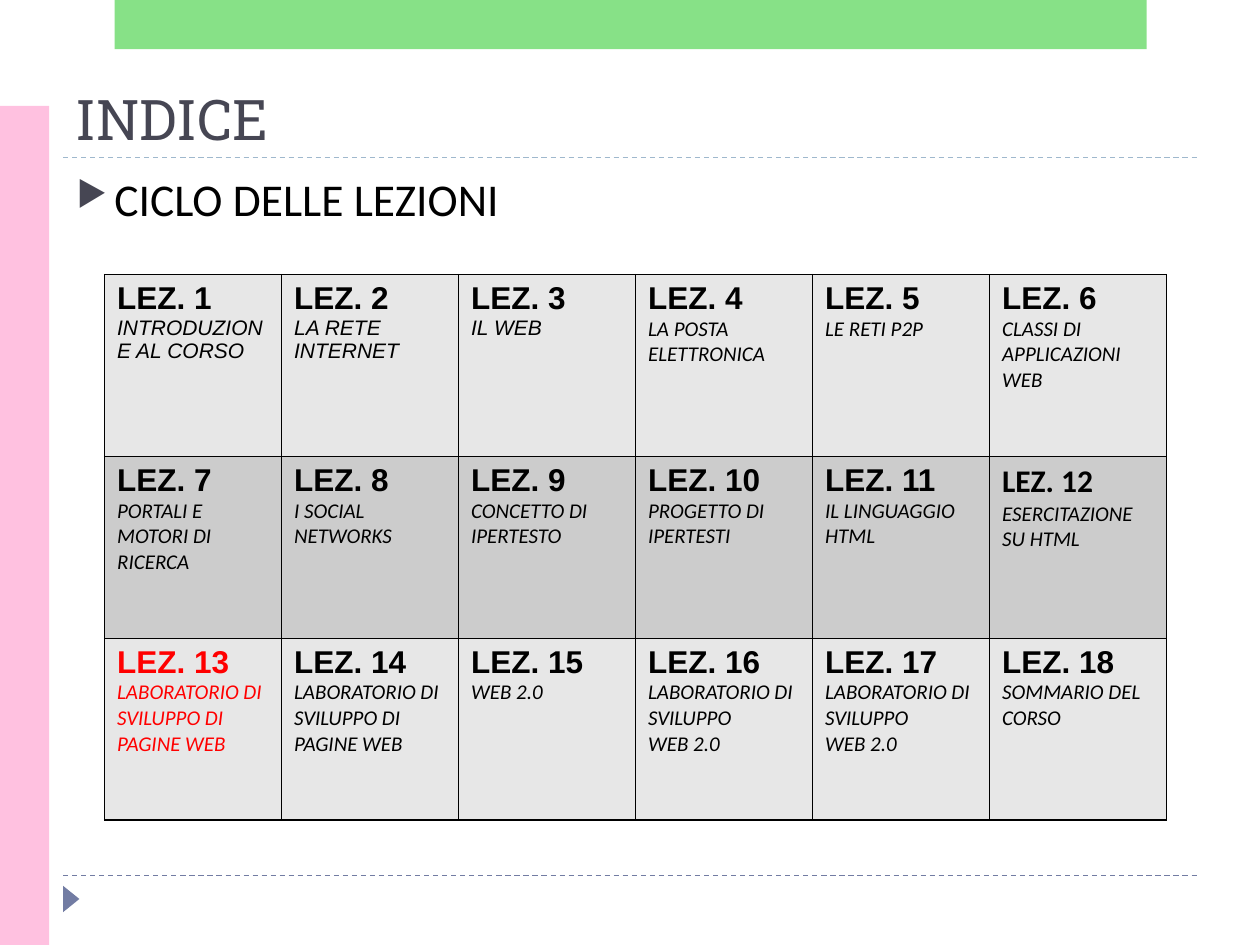
from dataclasses import dataclass

from lxml.etree import SubElement
from pptx import Presentation
from pptx.dml.color import RGBColor
from pptx.enum.dml import MSO_LINE
from pptx.enum.shapes import MSO_CONNECTOR, MSO_SHAPE
from pptx.enum.text import MSO_ANCHOR
from pptx.oxml.ns import qn
from pptx.util import Inches, Pt


@dataclass(frozen=True)
class Theme:
    heading_font: str = "Roboto Slab"
    body_font: str = "Calibri"
    table_font: str = "Arial"
    title_size: int = 32
    body_size: int = 26
    lesson_size: int = 18
    topic_size: int = 12
    ink: str = "000000"
    slate: str = "464653"
    accent: str = "727CA3"
    pale_rule: str = "9FB8CD"
    pink: str = "FFC1E0"
    green: str = "62D862"
    highlight: str = "FF0000"
    row_fills: tuple[str, ...] = ("E7E7E7", "CCCCCC")


THEME = Theme()


@dataclass(frozen=True)
class Lesson:
    topic: str
    number_font: str = THEME.table_font
    topic_font: str = THEME.body_font
    color: str = THEME.ink


@dataclass(frozen=True)
class Block:
    kind: MSO_SHAPE
    box: tuple[float, float, float, float]
    color: str
    rotation: int = 0
    opacity: int = 100


@dataclass(frozen=True)
class Rule:
    top: float
    color: str


BLOCKS = [
    Block(MSO_SHAPE.ISOSCELES_TRIANGLE, (0.46, 7.07, 0.21, 0.13), THEME.accent, rotation=90),
    Block(MSO_SHAPE.RECTANGLE, (0, 0.84, 0.39, 6.66), THEME.pink),
    Block(MSO_SHAPE.RECTANGLE, (0.91, 0, 8.19, 0.39), THEME.green, opacity=76),
]
RULES = [Rule(6.95, THEME.accent), Rule(1.25, THEME.pale_rule)]

LESSONS = [
    Lesson("INTRODUZIONE AL CORSO", topic_font=THEME.table_font),
    Lesson("LA RETE INTERNET", topic_font=THEME.table_font),
    Lesson("IL WEB", topic_font=THEME.table_font),
    Lesson("LA POSTA ELETTRONICA"),
    Lesson("LE RETI P2P"),
    Lesson("CLASSI DI APPLICAZIONI WEB"),
    Lesson("PORTALI E MOTORI DI RICERCA"),
    Lesson("I SOCIAL NETWORKS"),
    Lesson("CONCETTO DI IPERTESTO"),
    Lesson("PROGETTO DI IPERTESTI"),
    Lesson("IL LINGUAGGIO HTML"),
    Lesson("ESERCITAZIONE SU HTML", number_font=THEME.body_font),
    Lesson("LABORATORIO DI SVILUPPO DI PAGINE WEB", color=THEME.highlight),
    Lesson("LABORATORIO DI SVILUPPO DI PAGINE WEB"),
    Lesson("WEB 2.0"),
    Lesson("LABORATORIO DI SVILUPPO \nWEB 2.0"),
    Lesson("LABORATORIO DI SVILUPPO \nWEB 2.0"),
    Lesson("SOMMARIO DEL CORSO"),
]
COLUMNS = 6
ROWS = len(LESSONS) // COLUMNS


def add_span(para, text: str, font: str, size: int, color: str,
             bold: bool = False, italic: bool = False) -> None:
    for index, line in enumerate(text.split("\n")):
        if index:
            para.add_line_break()
        span = para.add_run()
        span.text = line
        span.font.name = font
        span.font.size = Pt(size)
        span.font.bold = bold
        span.font.italic = italic
        span.font.color.rgb = RGBColor.from_string(color)


def add_block(page, block: Block) -> None:
    shape = page.shapes.add_shape(block.kind, *map(Inches, block.box))
    shape.shadow.inherit = False
    shape.rotation = block.rotation
    shape.fill.solid()
    shape.fill.fore_color.rgb = RGBColor.from_string(block.color)
    shape.line.fill.background()
    if block.opacity < 100:
        color = shape.fill._xPr.find(".//" + qn("a:srgbClr"))
        SubElement(color, qn("a:alpha"), val=str(block.opacity * 1000))


def add_rule(page, rule: Rule) -> None:
    top = Inches(rule.top)
    line = page.shapes.add_connector(MSO_CONNECTOR.STRAIGHT, Inches(0.5), top, Inches(9.5), top)
    line.line.color.rgb = RGBColor.from_string(rule.color)
    line.line.width = Pt(0.75)
    line.line.dash_style = MSO_LINE.DASH
    SubElement(line._element.spPr, qn("a:effectLst"))


def add_text_box(page, left: float, top: float, width: float, height: float, anchor: MSO_ANCHOR):
    frame = page.shapes.add_textbox(*map(Inches, (left, top, width, height))).text_frame
    frame.word_wrap = True
    frame.vertical_anchor = anchor
    return frame.paragraphs[0]


def add_bullet(para) -> None:
    props = para._p.get_or_add_pPr()
    props.set("marL", str(Inches(0.3)))
    props.set("indent", str(-Inches(0.3)))
    color = SubElement(props, qn("a:buClr"))
    SubElement(color, qn("a:srgbClr"), val=THEME.slate)
    SubElement(props, qn("a:buSzPct"), val="76000")
    SubElement(props, qn("a:buChar"), char="▶")


def add_borders(cell) -> None:
    props = cell._tc.get_or_add_tcPr()
    for index, side in enumerate(("lnL", "lnR", "lnT", "lnB")):
        line = props.makeelement(qn(f"a:{side}"), {"w": str(Pt(1))})
        fill = SubElement(line, qn("a:solidFill"))
        SubElement(fill, qn("a:srgbClr"), val=THEME.ink)
        props.insert(index, line)


def fill_cell(cell, number: int, lesson: Lesson, fill: str) -> None:
    cell.fill.solid()
    cell.fill.fore_color.rgb = RGBColor.from_string(fill)
    add_borders(cell)
    frame = cell.text_frame
    add_span(frame.paragraphs[0], f"LEZ. {number}", lesson.number_font,
             THEME.lesson_size, lesson.color, bold=True)
    add_span(frame.add_paragraph(), lesson.topic, lesson.topic_font,
             THEME.topic_size, lesson.color, italic=True)


def add_lesson_table(page) -> None:
    box = map(Inches, (0.83, 2.18, 8.43, 4.33))
    table = page.shapes.add_table(ROWS, COLUMNS, *box).table
    for index, lesson in enumerate(LESSONS):
        row, column = divmod(index, COLUMNS)
        fill = THEME.row_fills[row % len(THEME.row_fills)]
        fill_cell(table.cell(row, column), index + 1, lesson, fill)


def main() -> None:
    deck = Presentation()
    deck.slide_width, deck.slide_height = Inches(10), Inches(7.5)
    page = deck.slides.add_slide(deck.slide_layouts[6])

    # Decoration
    for rule in RULES:
        add_rule(page, rule)
    for block in BLOCKS:
        add_block(page, block)

    # Title and subtitle
    title = add_text_box(page, 0.5, 0.55, 9, 0.7, MSO_ANCHOR.BOTTOM)
    add_span(title, "INDICE", THEME.heading_font, THEME.title_size, THEME.slate)
    subtitle = add_text_box(page, 0.51, 1.31, 9, 0.79, MSO_ANCHOR.TOP)
    add_bullet(subtitle)
    add_span(subtitle, "CICLO DELLE LEZIONI", THEME.body_font, THEME.body_size, THEME.ink)

    # Lesson grid
    add_lesson_table(page)
    deck.save("out.pptx")


if __name__ == "__main__":
    main()
